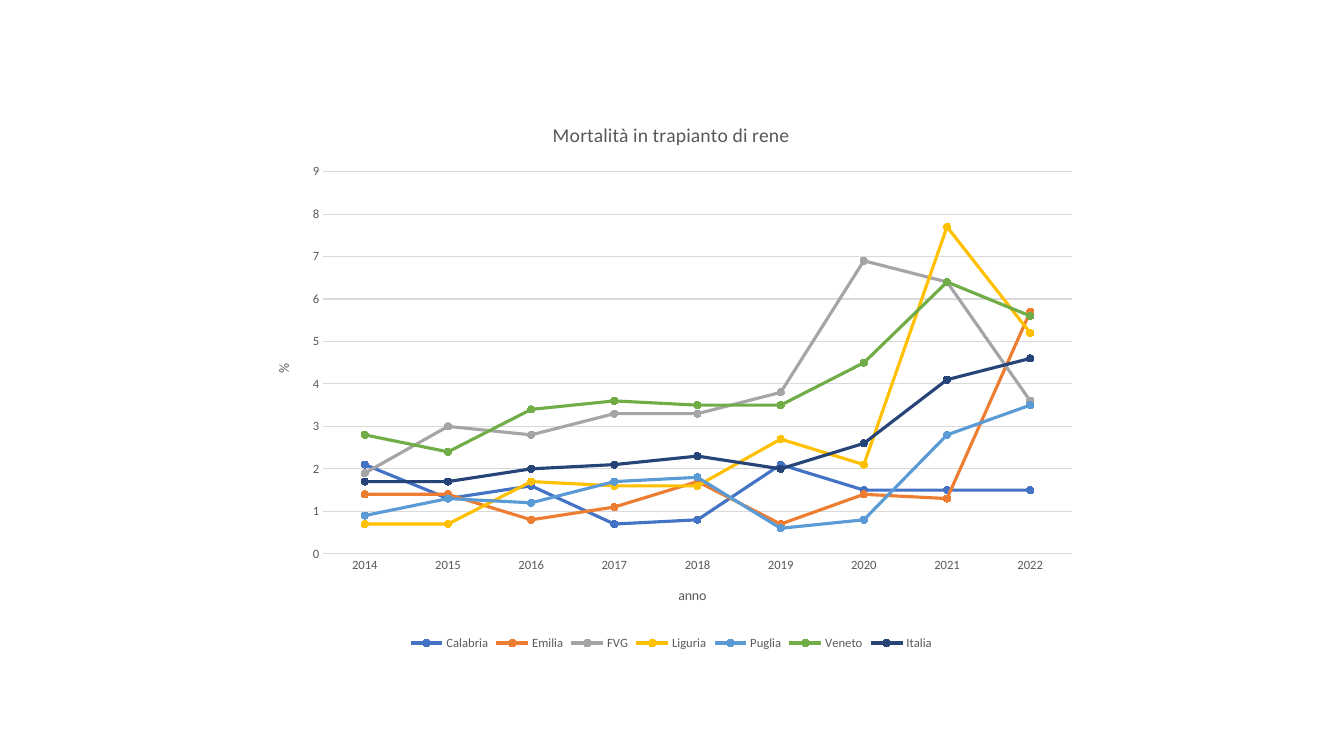
from pptx import Presentation
from pptx.chart.data import CategoryChartData
from pptx.dml.color import RGBColor
from pptx.enum.chart import (XL_CHART_TYPE, XL_LEGEND_POSITION,
                             XL_MARKER_STYLE, XL_TICK_MARK)
from pptx.util import Pt

LINE_CHART = XL_CHART_TYPE.LINE_MARKERS
BOTTOM = XL_LEGEND_POSITION.BOTTOM
CIRCLE = XL_MARKER_STYLE.CIRCLE
NO_TICK = XL_TICK_MARK.NONE

TITLE = "Mortalità in trapianto di rene"
X_TITLE, Y_TITLE = "anno", "%"
YEARS = [str(year) for year in range(2014, 2023)]
RATES = {
    "Calabria": (2.1, 1.3, 1.6, 0.7, 0.8, 2.1, 1.5, 1.5, 1.5),
    "Emilia": (1.4, 1.4, 0.8, 1.1, 1.7, 0.7, 1.4, 1.3, 5.7),
    "FVG": (1.9, 3, 2.8, 3.3, 3.3, 3.8, 6.9, 6.4, 3.6),
    "Liguria": (0.7, 0.7, 1.7, 1.6, 1.6, 2.7, 2.1, 7.7, 5.2),
    "Puglia": (0.9, 1.3, 1.2, 1.7, 1.8, 0.6, 0.8, 2.8, 3.5),
    "Veneto": (2.8, 2.4, 3.4, 3.6, 3.5, 3.5, 4.5, 6.4, 5.6),
    "Italia": (1.7, 1.7, 2, 2.1, 2.3, 2, 2.6, 4.1, 4.6),
}
THEME = {
    "font": "Calibri", "text": "595959", "grid": "D9D9D9",
    "title": 14, "axis": 10, "label": 9,
    "lines": ("4472C4", "ED7D31", "A5A5A5", "FFC000",
              "5B9BD5", "70AD47", "264478"),
}
SLIDE = (960, 540)
FRAME = (181.5, 72, 596, 395.5)


def set_font(font, size):
    font.name = THEME["font"]
    font.size = Pt(THEME[size])
    font.bold = False
    font.color.rgb = RGBColor.from_string(THEME["text"])


def set_line(line, color, width):
    line.color.rgb = RGBColor.from_string(color)
    line.width = Pt(width)


def set_title(owner, text, size):
    """Give a chart or an axis its title."""
    frame = (owner.chart_title if hasattr(owner, "chart_title")
             else owner.axis_title).text_frame
    frame.text = text
    set_font(frame.paragraphs[0].font, size)


def style_axis(axis, title):
    set_title(axis, title, "axis")
    axis.major_tick_mark = axis.minor_tick_mark = NO_TICK
    set_font(axis.tick_labels.font, "label")


def style_series(series, color):
    series.smooth = False
    set_line(series.format.line, color, 2.25)
    marker = series.marker
    marker.style, marker.size = CIRCLE, 5
    marker.format.fill.solid()
    marker.format.fill.fore_color.rgb = RGBColor.from_string(color)
    set_line(marker.format.line, color, 0.75)


def add_rates(slide):
    data = CategoryChartData()
    data.categories = YEARS
    for name, values in RATES.items():
        data.add_series(name, values)
    chart = slide.shapes.add_chart(LINE_CHART, *map(Pt, FRAME), data).chart
    set_font(chart.font, "axis")
    set_title(chart, TITLE, "title")
    chart.has_legend = True
    chart.legend.position = BOTTOM
    chart.legend.include_in_layout = False
    set_font(chart.legend.font, "label")

    years, rates = chart.category_axis, chart.value_axis
    style_axis(years, X_TITLE)
    style_axis(rates, Y_TITLE)
    set_line(years.format.line, THEME["grid"], 0.75)
    rates.format.line.fill.background()
    rates.minimum_scale, rates.maximum_scale, rates.major_unit = 0, 9, 1
    rates.has_major_gridlines = True
    set_line(rates.major_gridlines.format.line, THEME["grid"], 0.75)
    rates.axis_title.text_frame._txBody.bodyPr.set("rot", "-5400000")

    plot = chart.plots[0]
    plot.vary_by_categories = False
    for series, color in zip(plot.series, THEME["lines"]):
        style_series(series, color)


def main():
    deck = Presentation()
    deck.slide_width, deck.slide_height = map(Pt, SLIDE)
    add_rates(deck.slides.add_slide(deck.slide_layouts[6]))
    deck.save("out.pptx")


if __name__ == "__main__":
    main()
